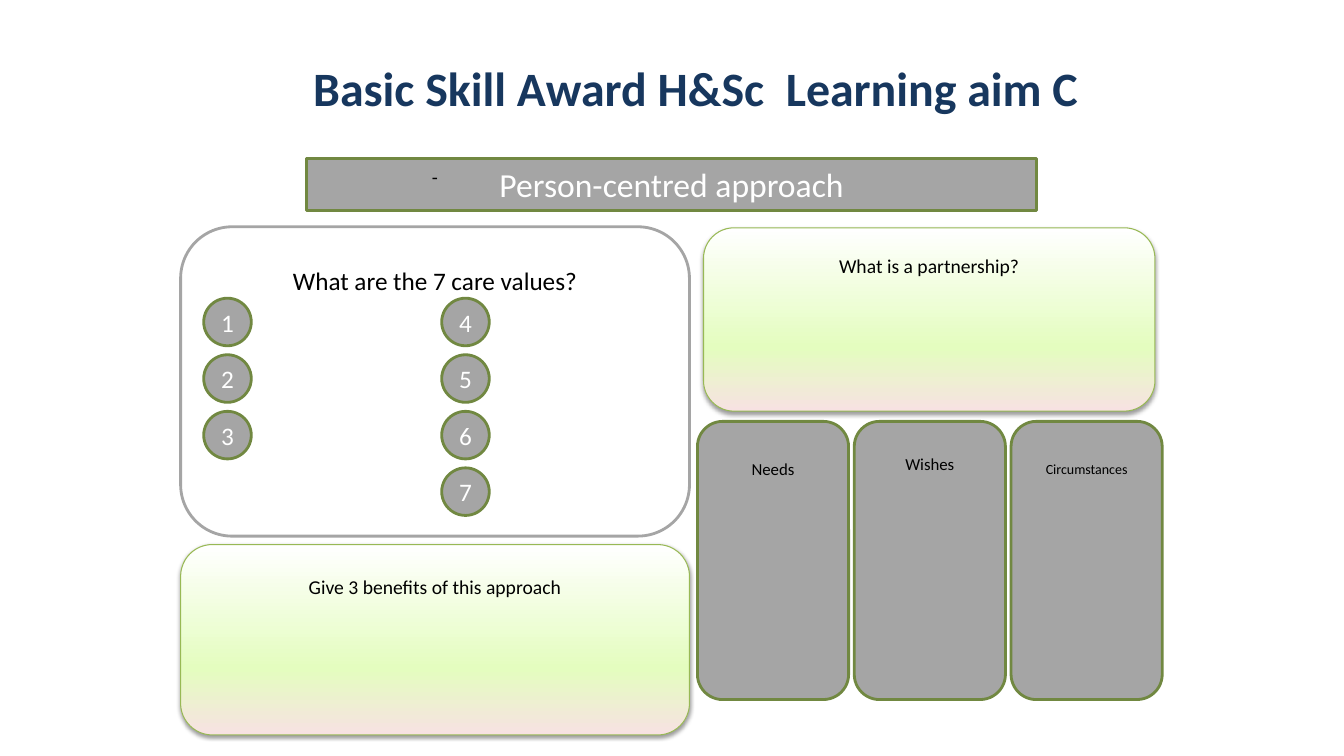
from lxml import etree
from copy import deepcopy
from pptx import Presentation
from pptx import util as u
from pptx.dml import color
from pptx.enum import shapes, text
from pptx.oxml import ns

Pt = u.Pt
GREY, GREEN, WHITE, BLACK = "A5A5A5", "718841", "FFFFFF", "000000"
RECT = shapes.MSO_SHAPE.RECTANGLE
ROUND = shapes.MSO_SHAPE.ROUNDED_RECTANGLE
OVAL = shapes.MSO_SHAPE.OVAL


def rgb(hex_color):
    return color.RGBColor.from_string(hex_color)


def set_text(sp, label, size, hex_color, top=None, bold=False):
    tf = sp.text_frame
    tf.word_wrap = True
    tf.margin_left = tf.margin_right = tf.margin_bottom = 0
    tf.margin_top = Pt(top or 0)
    tf.vertical_anchor = text.MSO_ANCHOR.MIDDLE if top is None else text.MSO_ANCHOR.TOP
    tf.text = label
    p = tf.paragraphs[0]
    p.alignment = text.PP_ALIGN.CENTER
    p.font.name = "Calibri"
    p.font.size = Pt(size)
    p.font.bold = bold
    p.font.color.rgb = rgb(hex_color)


def add_title(s, label):
    sp = s.shapes.title
    sp.left, sp.top, sp.width, sp.height = Pt(66), Pt(28.8), Pt(862), Pt(72.7)
    set_text(sp, label, 34.2, "17375E", bold=True)
    sp.text_frame.paragraphs[0].line_spacing = 0.9


def add_box(s, kind, x, y, w, h, fill=GREY, line=GREEN, weight=2):
    sp = s.shapes.add_shape(kind, Pt(x), Pt(y), Pt(w), Pt(h))
    sp.shadow.inherit = False
    sp.fill.solid()
    sp.fill.fore_color.rgb = rgb(fill)
    sp.line.color.rgb = rgb(line)
    sp.line.width = Pt(weight)
    return sp


def add_shadow(sp):
    effects = sp._element.spPr.find(ns.qn("a:effectLst"))
    shadow = etree.SubElement(effects, ns.qn("a:outerShdw"), blurRad=str(Pt(3)),
                              dist=str(Pt(1.6)), dir="5400000", rotWithShape="0")
    clr = etree.SubElement(shadow, ns.qn("a:srgbClr"), val=BLACK)
    etree.SubElement(clr, ns.qn("a:alpha"), val="38000")


def add_question(s, x, y, w, h, label, top):
    sp = add_box(s, ROUND, x, y, w, h, line="98B955", weight=0.75)
    sp.fill.gradient()
    sp.fill.gradient_angle = 90
    first = sp._element.spPr.find(".//" + ns.qn("a:gs"))
    first.addnext(deepcopy(first))
    stops = [(0, "F7E2E2"), (0.35, "E4FDBF"), (1, WHITE)]
    for stop, (position, hex_color) in zip(sp.fill.gradient_stops, stops):
        stop.position = position
        stop.color.rgb = rgb(hex_color)
    add_shadow(sp)
    set_text(sp, label, 14, BLACK, top)


def add_numbers(s, x, numbers):
    for row, number in enumerate(numbers):
        sp = add_box(s, OVAL, x, 213 + row * 40.4, 34, 34)
        set_text(sp, str(number), 18, WHITE)


def main():
    prs = Presentation()
    prs.slide_width, prs.slide_height = Pt(960), Pt(540)
    s = prs.slides.add_slide(prs.slide_layouts[5])
    add_title(s, "Basic Skill Award H&Sc  Learning aim C")

    banner = add_box(s, RECT, 219, 113, 521.5, 37.5)
    set_text(banner, "Person-centred approach", 24, WHITE)

    values = add_box(s, ROUND, 129, 162, 363.5, 221, WHITE, GREY)
    set_text(values, "What are the 7 care values?", 18, BLACK, 16.8)
    dash = s.shapes.add_textbox(Pt(300), Pt(118), Pt(21.5), Pt(17))
    set_text(dash, "-", 14, BLACK)
    add_numbers(s, 145.5, range(1, 4))
    add_numbers(s, 315.5, range(4, 8))

    add_question(s, 502.5, 162.7, 322.5, 131, "What is a partnership?", 12.4)
    columns = [("Needs", 12, 21.2), ("Wishes", 12, 18), ("Circumstances", 10, 23)]
    for i, (label, size, top) in enumerate(columns):
        sp = add_box(s, ROUND, 498.2 + i * 112, 301, 108, 198.7)
        set_text(sp, label, size, BLACK, top)
    add_question(s, 129, 389, 363.5, 136, "Give 3 benefits of this approach", 14.8)

    prs.save("out.pptx")


if __name__ == "__main__":
    main()
